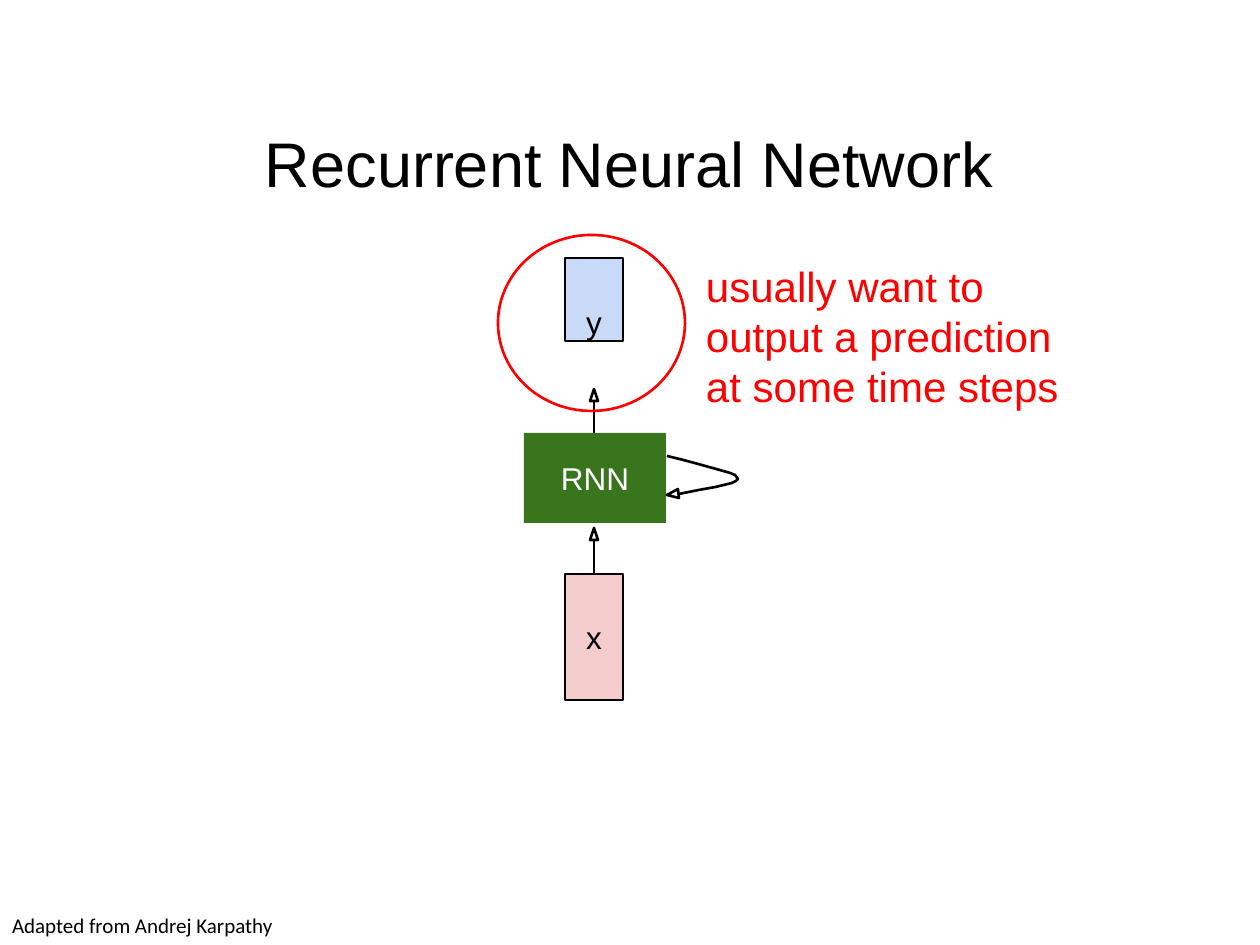
"""Build the recurrent neural network slide."""
import pptx
import pptx.dml.color
import pptx.enum.shapes
import pptx.enum.text
import pptx.oxml.ns
import pptx.util
from lxml import etree

SCALE = 914400 / 126
KIND = pptx.enum.shapes.MSO_SHAPE
ALIGN = pptx.enum.text.PP_ALIGN
ANCHOR = pptx.enum.text.MSO_ANCHOR
BLACK, WHITE, RED = "000000", "FFFFFF", "FF0000"
LOOP = [(667, 456), (683, 460), (698, 464), (716, 469), (730, 473), (735, 475),
        (738, 479), (736, 481), (732, 483), (716, 487), (699, 490), (679, 494)]
LOOP_HEAD = [(678, 489), (667, 495), (679, 498)]


def px(*sizes):
    """Turn pixel lengths into EMU."""
    return [round(size * SCALE) for size in sizes]


def color(code):
    """Turn a hex string into a colour."""
    return pptx.dml.color.RGBColor.from_string(code)


def style(shape, fill, line, width):
    """Set fill and outline, and drop the shadow."""
    shape.shadow.inherit = False
    if fill:
        shape.fill.solid()
        shape.fill.fore_color.rgb = color(fill)
    else:
        shape.fill.background()
    if line:
        shape.line.color.rgb = color(line)
        shape.line.width = pptx.util.Pt(width)
    else:
        shape.line.fill.background()


def write(shape, text, size, tint=BLACK, align=ALIGN.LEFT, anchor=ANCHOR.TOP,
          font="Arial", inset=(0, 0)):
    """Put one formatted paragraph into a shape."""
    frame = shape.text_frame
    frame.word_wrap = True
    frame.auto_size = pptx.enum.text.MSO_AUTO_SIZE.NONE
    frame.vertical_anchor = anchor
    frame.margin_left, frame.margin_top = px(*inset)
    frame.margin_right, frame.margin_bottom = px(*inset)
    frame.text = text
    para = frame.paragraphs[0]
    para.alignment = align
    para.font.size = pptx.util.Pt(size)
    para.font.name = font
    para.font.color.rgb = color(tint)
    return para


def node(slide, place, text, fill, line=BLACK, tint=BLACK, anchor=ANCHOR.MIDDLE):
    """Add a labelled network block."""
    box = slide.shapes.add_shape(KIND.RECTANGLE, *px(*place))
    style(box, fill, line, 0.75)
    write(box, text, 18, tint, ALIGN.CENTER, anchor)


def note(slide, place, text, size, **look):
    """Add a text box."""
    return write(slide.shapes.add_textbox(*px(*place)), text, size, **look)


def trace(slide, points, close):
    """Draw an unfilled outline through points."""
    pen = slide.shapes.build_freeform(*points[0], scale=SCALE)
    pen.add_line_segments(points[1:], close=close)
    style(pen.convert_to_shape(), None, BLACK, 1.5)


def arrow(slide, x, start, end):
    """Draw an upward arrow with a hollow head."""
    neck = end + 12
    kind = pptx.enum.shapes.MSO_CONNECTOR.STRAIGHT
    shaft = slide.shapes.add_connector(kind, *px(x, start, x, neck))
    shaft.line.color.rgb = color(BLACK)
    shaft.line.width = pptx.util.Pt(1.5)
    etree.SubElement(shaft._element.spPr, pptx.oxml.ns.qn("a:effectLst"))
    trace(slide, [(x + 4, neck), (x, end), (x - 4, neck)], True)


def main():
    """Build and save the slide."""
    deck = pptx.Presentation()
    deck.slide_width, deck.slide_height = px(1260, 945)
    slide = deck.slides.add_slide(deck.slide_layouts[5])
    title = slide.shapes.title
    title.left, title.top, title.width, title.height = px(265, 124, 740, 77)
    write(title, "Recurrent Neural Network", 36)

    node(slide, (565, 574, 58, 126), "x", "F4CCCC")
    node(slide, (524, 433, 142, 90), "RNN", "38751C", None, WHITE)
    node(slide, (565, 258, 58, 83), "y", "C8DAF7", anchor=ANCHOR.BOTTOM)
    arrow(slide, 594, 433, 389)
    arrow(slide, 594, 574, 528)
    trace(slide, LOOP, False)
    trace(slide, LOOP_HEAD, True)
    ring = slide.shapes.add_shape(KIND.OVAL, *px(498, 235, 187, 176))
    style(ring, None, RED, 1.5)

    hint = note(slide, (706, 261, 373, 154),
                "usually want to output a prediction at some time steps", 24, tint=RED)
    hint.line_spacing = pptx.util.Pt(28.5)
    note(slide, (0, 907, 321, 38), "Adapted from Andrej Karpathy", 12,
         font="Calibri", inset=(12, 6))
    deck.save("out.pptx")


if __name__ == "__main__":
    main()
